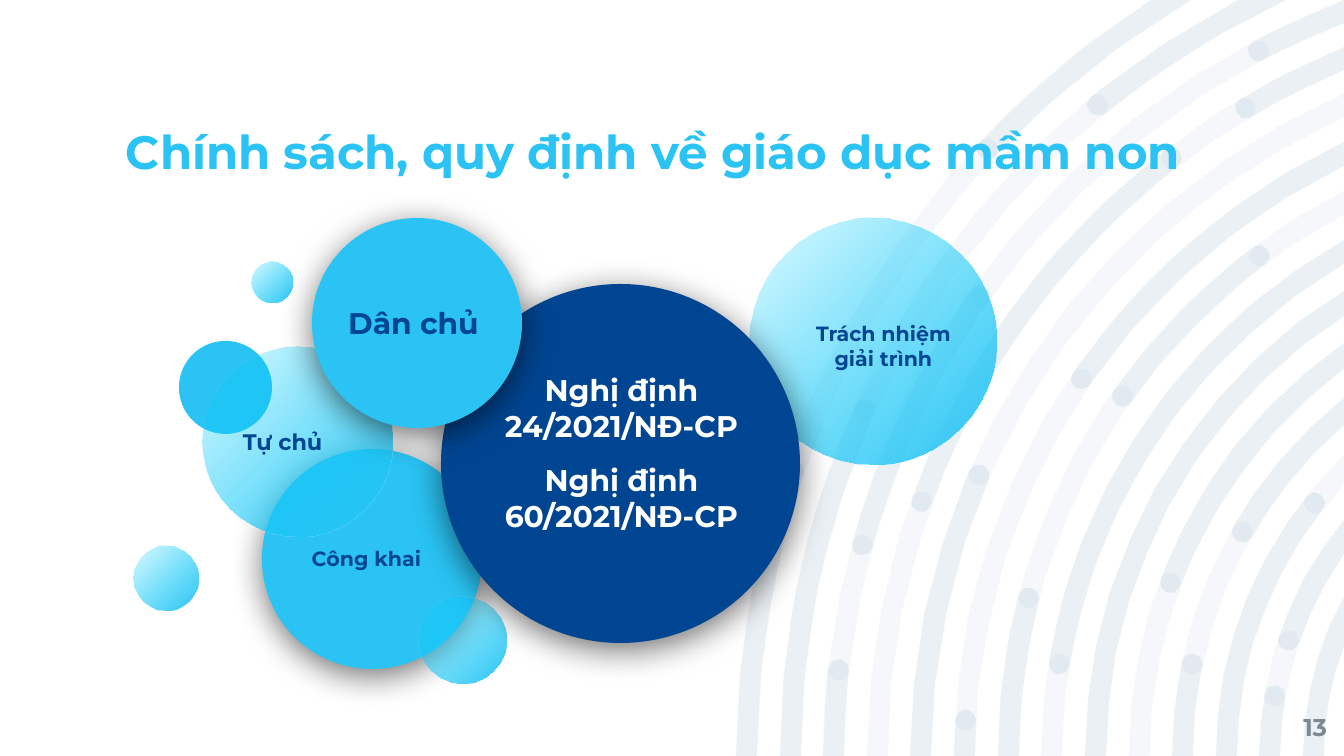
import math

import pptx
import pptx.dml.color
import pptx.enum.shapes
import pptx.enum.text
import pptx.oxml
import pptx.oxml.ns
import pptx.util
from lxml import etree

PX = 9144000 / 1344
WIDTH, HEIGHT = 1344, 756
FONT = "Montserrat"
NAVY = pptx.dml.color.RGBColor(0x00, 0x45, 0x91)
SKY = pptx.dml.color.RGBColor(0x2A, 0xC3, 0xF3)
CYAN = pptx.dml.color.RGBColor(0x00, 0xD0, 0xFF)
GREY = pptx.dml.color.RGBColor(0x7C, 0x88, 0x94)
WHITE = pptx.dml.color.RGBColor(0xFF, 0xFF, 0xFF)
LEFT = pptx.enum.text.PP_ALIGN.LEFT
CENTER = pptx.enum.text.PP_ALIGN.CENTER
RIGHT = pptx.enum.text.PP_ALIGN.RIGHT
MIDDLE = pptx.enum.text.MSO_ANCHOR.MIDDLE
BOTTOM = pptx.enum.text.MSO_ANCHOR.BOTTOM

# Rings share one centre; angles are degrees up from its left.
RING_X, RING_Y = 1632, 756
RING_COUNT, RING_OUTER, RING_SPAN, RING_WIDTH = 14, 896, 567, 21
EDGE = 90
CURVE_STEP = 6
DOT_CORNERS = 10
# (ring, start angle, end angle); arcs run to the slide edge at 0 and EDGE
ARCS = [
    (0, 0, 18.8), (0, 43.3, EDGE), (1, 0, 24.3), (1, 50.6, EDGE),
    (2, 0, 6.2), (2, 15.3, 35.2), (2, 62.1, EDGE),
    (3, 19.7, 52.4), (3, 59.2, EDGE), (4, 0, 23.3),
    (5, 0, 3.1), (5, 34.4, EDGE), (6, 0, 14.7), (6, 35.2, 53.3),
    (7, 9.1, EDGE), (8, 0, EDGE), (9, 20.6, EDGE),
    (10, 0, 11.8), (10, 29.9, EDGE), (11, 0, 38.6),
    (12, 0, 9.6), (12, 18.6, EDGE), (13, 0, EDGE),
]


def emu(*lengths):
    return [pptx.util.Emu(round(length * PX)) for length in lengths]


def ring_radius(ring):
    """Radius of the middle of a ring's band."""
    return RING_OUTER - RING_SPAN * ring / (RING_COUNT - 1) - RING_WIDTH / 2


def ring_point(radius, angle):
    turn = math.radians(angle)
    return RING_X - radius * math.cos(turn), RING_Y - radius * math.sin(turn)


def edge_angle(radius):
    """Angle at which a circle leaves the slide at the right or the top."""
    side = math.acos((RING_X - WIDTH) / radius)
    top = math.asin(min(1, RING_Y / radius))
    return math.degrees(min(side, top))


def curve(radius, start, end):
    end = min(end, edge_angle(radius))
    steps = math.ceil((end - start) / CURVE_STEP)
    return [ring_point(radius, start + (end - start) * step / steps)
            for step in range(steps + 1)]


def dot(ring, angle):
    x, y = ring_point(ring_radius(ring), angle)
    turns = [math.tau * step / DOT_CORNERS for step in range(DOT_CORNERS)]
    return [(x + RING_WIDTH / 2 * math.cos(turn), y + RING_WIDTH / 2 * math.sin(turn))
            for turn in turns]


def cap(ring, angle, direction):
    """Half circle from the outer to the inner rim of a band."""
    x, y = ring_point(ring_radius(ring), angle)
    turns = [math.radians(angle + direction * turn) for turn in (45, 90, 135)]
    return [(x - RING_WIDTH / 2 * math.cos(turn), y - RING_WIDTH / 2 * math.sin(turn))
            for turn in turns]


def arc(ring, start, end):
    middle = ring_radius(ring)
    outline = curve(middle + RING_WIDTH / 2, start, end)
    if end != EDGE:
        outline += cap(ring, end, 1)
    outline += curve(middle - RING_WIDTH / 2, start, end)[::-1]
    if start != 0:
        outline += cap(ring, start, -1)[::-1]
    return outline


def paint(shape, color):
    shape.shadow.inherit = False
    shape.line.fill.background()
    shape.fill.solid()
    shape.fill.fore_color.rgb = color


def add_faint_outlines(page, outlines):
    builder = page.shapes.build_freeform(*outlines[0][0], scale=PX)
    for outline in outlines:
        if outline is not outlines[0]:
            builder.move_to(*outline[0])
        builder.add_line_segments(outline[1:], close=True)
    shape = builder.convert_to_shape()
    paint(shape, NAVY)
    color = shape._element.spPr.find(".//" + pptx.oxml.ns.qn("a:srgbClr"))
    etree.SubElement(color, pptx.oxml.ns.qn("a:alpha"), val="4000")


def add_rings(page):
    ends = [(ring, angle) for ring, start, end in ARCS
            for angle in (start, end) if angle not in (0, EDGE)]
    add_faint_outlines(page, [arc(ring, 0, EDGE) for ring in range(RING_COUNT)])
    add_faint_outlines(page, [arc(*part) for part in ARCS])
    add_faint_outlines(page, [dot(*end) for end in ends])


def write(shape, lines, size, color, align=CENTER, anchor=MIDDLE, inset=13, gap=0):
    frame = shape.text_frame
    frame.word_wrap = True
    frame.vertical_anchor = anchor
    (frame.margin_left, frame.margin_right,
     frame.margin_top, frame.margin_bottom) = emu(inset, inset, inset, inset)
    for index, line in enumerate(lines):
        para = frame.add_paragraph() if index else frame.paragraphs[0]
        para.text = line
        para.alignment = align
        para.font.name, para.font.size, para.font.bold = FONT, pptx.util.Pt(size), True
        para.font.color.rgb = color
        if index:
            para.space_before = pptx.util.Pt(gap)
    return frame


def add_text(page, box, lines, size, color, **style):
    return write(page.shapes.add_textbox(*emu(*box)), lines, size, color, **style)


def add_circle(page, x, y, size, color):
    oval = pptx.enum.shapes.MSO_SHAPE.OVAL
    circle = page.shapes.add_shape(oval, *emu(x, y, size, size))
    paint(circle, color)
    return circle


def add_raised_circle(page, x, y, size, color):
    """Circle with a soft shadow below it."""
    circle = add_circle(page, x, y, size, color)
    effects = circle._element.spPr.find(pptx.oxml.ns.qn("a:effectLst"))
    effects.append(pptx.oxml.parse_xml(
        f'<a:outerShdw {pptx.oxml.ns.nsdecls("a")} blurRad="228600" dist="50800" '
        'dir="5400000" algn="ctr" rotWithShape="0"><a:srgbClr val="000000">'
        '<a:alpha val="55000"/></a:srgbClr></a:outerShdw>'))


def add_glass_circle(page, x, y, size):
    """Circle that fades out towards its top left."""
    circle = add_circle(page, x, y, size, SKY)
    properties = circle._element.spPr
    solid = properties.find(pptx.oxml.ns.qn("a:solidFill"))
    properties.replace(solid, pptx.oxml.parse_xml(
        f'<a:gradFill {pptx.oxml.ns.nsdecls("a")}><a:gsLst>'
        f'<a:gs pos="0"><a:srgbClr val="{SKY}"/></a:gs>'
        f'<a:gs pos="100000"><a:srgbClr val="{CYAN}"><a:alpha val="12000"/></a:srgbClr></a:gs>'
        '</a:gsLst><a:path path="circle"><a:fillToRect l="100000" t="100000"/></a:path>'
        '</a:gradFill>'))
    return circle


def add_bubbles(page, left, top):
    add_raised_circle(page, left + 128, top + 231, 220, SKY)
    add_text(page, (left + 137, top + 271, 191, 138), ["Công khai"], 11, NAVY)
    add_circle(page, left + 45, top + 123, 93, SKY)
    for x, y, size in [(285, 379, 87), (0, 328, 65), (616, 0, 247), (117, 44, 41)]:
        add_glass_circle(page, left + x, top + y, size)
    autonomy = add_glass_circle(page, left + 68, top + 129, 190)
    write(autonomy, ["Tự chủ"], 12, NAVY, align=LEFT)
    add_raised_circle(page, left + 307, top + 66, 359, NAVY)
    decrees = ["Nghị định 24/2021/NĐ-CP", "Nghị định 60/2021/NĐ-CP"]
    add_text(page, (left + 314, top + 149, 347, 171), decrees, 16, WHITE, gap=9.75)
    add_raised_circle(page, left + 178, top, 210, SKY)
    add_text(page, (left + 178, top + 36, 203, 138), ["Dân chủ"], 16, NAVY)
    add_text(page, (left + 648, top + 59, 203, 138), ["Trách nhiệm giải trình"], 11, NAVY)


def main():
    deck = pptx.Presentation()
    deck.slide_width, deck.slide_height = emu(WIDTH, HEIGHT)
    page = deck.slides.add_slide(deck.slide_layouts[6])
    add_rings(page)
    title = add_text(page, (126, 122, 1093, 58), ["Chính sách, quy định về giáo dục mầm non"],
                     25, SKY, align=LEFT, anchor=BOTTOM, inset=0)
    title.paragraphs[0].line_spacing = 0.9
    add_text(page, (1246, 698, 81, 58), ["13"], 13, GREY, align=RIGHT, inset=0)
    add_bubbles(page, 134, 218)
    deck.save("out.pptx")


if __name__ == "__main__":
    main()
